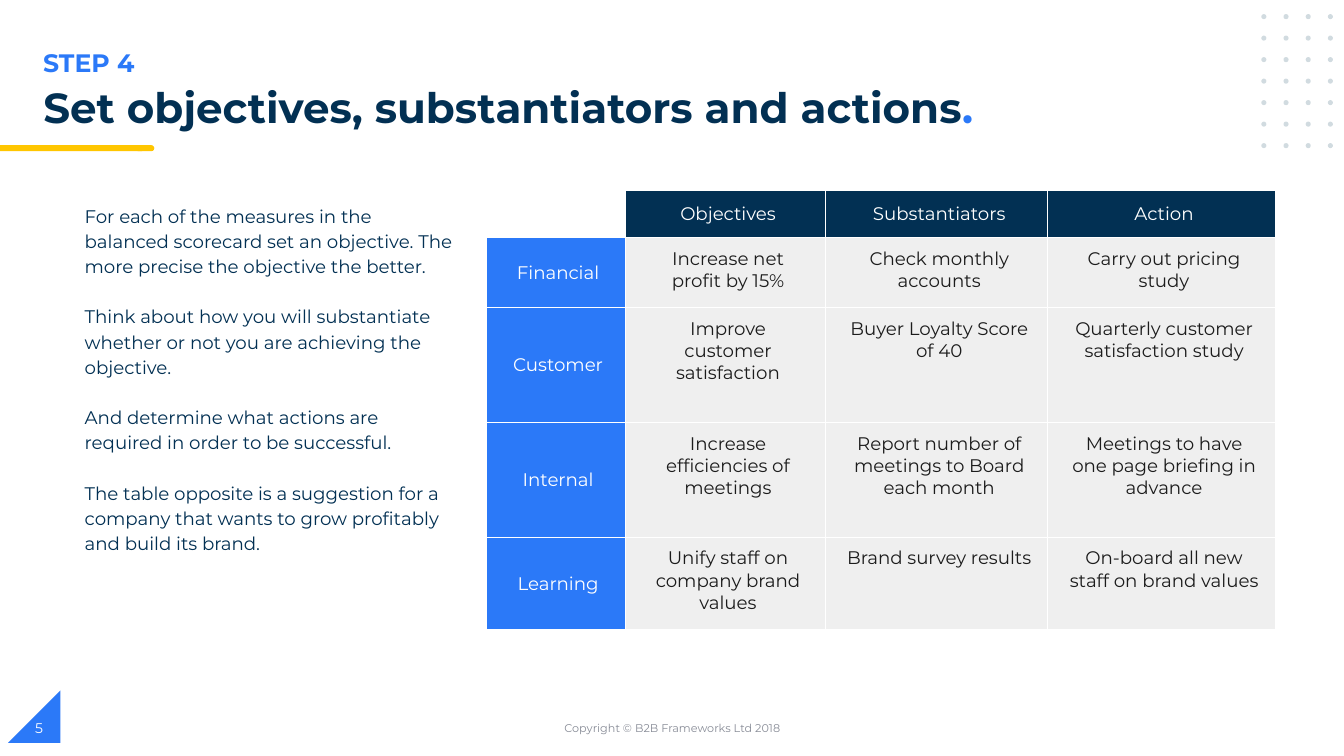
"""Build the Step 4 slide: objectives, substantiators and actions."""
from lxml import etree
from pptx import Presentation
from pptx.dml.color import RGBColor
from pptx.enum.shapes import MSO_SHAPE
from pptx.enum.text import MSO_ANCHOR, MSO_AUTO_SIZE, PP_ALIGN
from pptx.oxml.ns import qn
from pptx.util import Inches, Pt

FONT = "Montserrat"
BLUE = RGBColor(0x2B, 0x79, 0xF8)
NAVY = RGBColor(0x02, 0x30, 0x53)
YELLOW = RGBColor(0xFF, 0xC6, 0x00)
DOT = RGBColor(0xD1, 0xDB, 0xE0)
GREY = RGBColor(0x88, 0x8C, 0x97)
PALE = RGBColor(0xEF, 0xEF, 0xEF)
INK = RGBColor(0x1C, 0x1C, 0x1C)
WHITE = RGBColor(0xFF, 0xFF, 0xFF)

STEP = "STEP 4"
TITLE = "Set objectives, substantiators and actions"
COPYRIGHT = "Copyright © B2B Frameworks Ltd 2018"
PAGE = "5"
ADVICE = [
    "For each of the measures in the balanced scorecard set an objective. "
    "The more precise the objective the better.",
    "Think about how you will substantiate whether or not you are achieving the objective.",
    "And determine what actions are required in order to be successful.",
    "The table opposite is a suggestion for a company that wants to grow profitably "
    "and build its brand.",
]
SCORECARD = [
    ("", "Objectives", "Substantiators", "Action"),
    ("Financial", "Increase net profit by 15%", "Check monthly accounts",
     "Carry out pricing study"),
    ("Customer", "Improve customer satisfaction", "Buyer Loyalty Score of 40",
     "Quarterly customer satisfaction study"),
    ("Internal", "Increase efficiencies of meetings",
     "Report number of meetings to Board each month",
     "Meetings to have one page briefing in advance"),
    ("Learning", "Unify staff on company brand values", "Brand survey results",
     "On-board all new staff on brand values"),
]
COL_WIDTHS = [1.38, 1.99, 2.2, 2.26]
ROW_HEIGHTS = [0.47, 0.69, 1.14, 1.14, 0.92]
DOT_COLS, DOT_ROWS = 4, 7


def add_run(p, words, size, color, bold=False):
    """Add one formatted run to a paragraph."""
    r = p.add_run()
    r.text = words
    r.font.name, r.font.size, r.font.bold = FONT, Pt(size), bold
    r.font.color.rgb = color


def add_shape(s, kind, box, color):
    """Add a plain filled shape."""
    sp = s.shapes.add_shape(kind, *map(Inches, box))
    sp.shadow.inherit = False
    sp.fill.solid()
    sp.fill.fore_color.rgb = color
    sp.line.fill.background()
    return sp


def add_label(s, box, words, size, color, bold=False,
              align=PP_ALIGN.LEFT, anchor=MSO_ANCHOR.MIDDLE):
    """Add a text box holding a single line."""
    tf = s.shapes.add_textbox(*map(Inches, box)).text_frame
    tf.word_wrap, tf.vertical_anchor = True, anchor
    p = tf.paragraphs[0]
    p.alignment = align
    add_run(p, words, size, color, bold)


def place(sp, box):
    """Move a placeholder and return its text frame, top anchored."""
    sp.left, sp.top, sp.width, sp.height = map(Inches, box)
    tf = sp.text_frame
    tf.word_wrap, tf.auto_size = True, MSO_AUTO_SIZE.NONE
    tf.vertical_anchor = MSO_ANCHOR.TOP
    return tf


def add_borders(cell):
    """Draw thin white lines round a cell."""
    tcPr = cell._tc.get_or_add_tcPr()
    for side in ("a:lnL", "a:lnR", "a:lnT", "a:lnB"):
        ln = etree.SubElement(tcPr, qn(side), w=str(Pt(0.75)))
        fill = etree.SubElement(ln, qn("a:solidFill"))
        etree.SubElement(fill, qn("a:srgbClr"), val=str(WHITE))


def add_decor(s):
    """Add the corner triangle, title rule and dot grid."""
    corner = add_shape(s, MSO_SHAPE.RIGHT_TRIANGLE, (0.08, 6.85, 0.52, 0.52), BLUE)
    corner._element.spPr.get_or_add_xfrm().set("flipH", "1")
    add_shape(s, MSO_SHAPE.FLOWCHART_TERMINATOR, (1.34, 1.44, 0.19, 0.06), YELLOW)
    add_shape(s, MSO_SHAPE.RECTANGLE, (0, 1.44, 1.41, 0.06), YELLOW)
    row_gap = (1.42 - 0.14) / (DOT_ROWS - 1)
    for row in range(DOT_ROWS):
        for col in range(DOT_COLS):
            box = (12.51 + col * 0.22, 0.14 + row * row_gap, 0.05, 0.05)
            add_shape(s, MSO_SHAPE.OVAL, box, DOT)


def add_title(s):
    """Fill the title placeholder."""
    p = place(s.shapes.title, (0.33, 0.82, 10.31, 0.56)).paragraphs[0]
    p.alignment, p.line_spacing = PP_ALIGN.LEFT, 0.9
    add_run(p, TITLE, 30, NAVY, True)
    add_run(p, ".", 30, BLUE, True)


def add_advice(s):
    """Fill the body placeholder with unbulleted paragraphs."""
    tf = place(s.placeholders[1], (0.74, 1.95, 3.88, 3.59))
    for i, words in enumerate(ADVICE):
        p = tf.add_paragraph() if i else tf.paragraphs[0]
        pPr = p._p.get_or_add_pPr()
        pPr.set("marL", "0")
        pPr.set("indent", "0")
        etree.SubElement(pPr, qn("a:buNone"))
        p.line_spacing = 1.15
        p.space_before = Pt(18.2 if i else 0)
        add_run(p, words, 13, NAVY)


def add_scorecard(s):
    """Add the scorecard table."""
    box = (4.82, 1.89, sum(COL_WIDTHS), sum(ROW_HEIGHTS))
    table = s.shapes.add_table(len(SCORECARD), len(COL_WIDTHS), *map(Inches, box)).table
    table.first_row = table.horz_banding = False
    for col, width in zip(table.columns, COL_WIDTHS):
        col.width = Inches(width)
    for i, (row, height) in enumerate(zip(table.rows, ROW_HEIGHTS)):
        row.height = Inches(height)
        for j, (cell, words) in enumerate(zip(row.cells, SCORECARD[i])):
            add_borders(cell)
            if not words:
                cell.fill.background()
                continue
            heading = i == 0 or j == 0
            cell.fill.solid()
            cell.fill.fore_color.rgb = NAVY if i == 0 else BLUE if j == 0 else PALE
            cell.margin_left, cell.margin_right = Inches(0.2), Inches(0.15)
            cell.margin_top = cell.margin_bottom = Inches(0.1)
            cell.vertical_anchor = MSO_ANCHOR.MIDDLE if heading else MSO_ANCHOR.TOP
            p = cell.text_frame.paragraphs[0]
            p.alignment = PP_ALIGN.CENTER
            add_run(p, words, 13, WHITE if heading else INK)


def main():
    """Build and save the slide."""
    prs = Presentation()
    prs.slide_width, prs.slide_height = Inches(13.33), Inches(7.5)
    s = prs.slides.add_slide(prs.slide_layouts[1])
    add_decor(s)
    add_label(s, (0.33, 0.42, 6.69, 0.4), STEP, 18, BLUE, True, anchor=MSO_ANCHOR.TOP)
    add_label(s, (4.42, 7.02, 4.5, 0.4), COPYRIGHT, 8, GREY, align=PP_ALIGN.CENTER)
    add_label(s, (0.25, 7.02, 3, 0.4), PAGE, 10, WHITE)
    add_title(s)
    add_scorecard(s)
    add_advice(s)
    prs.save("out.pptx")


if __name__ == "__main__":
    main()
